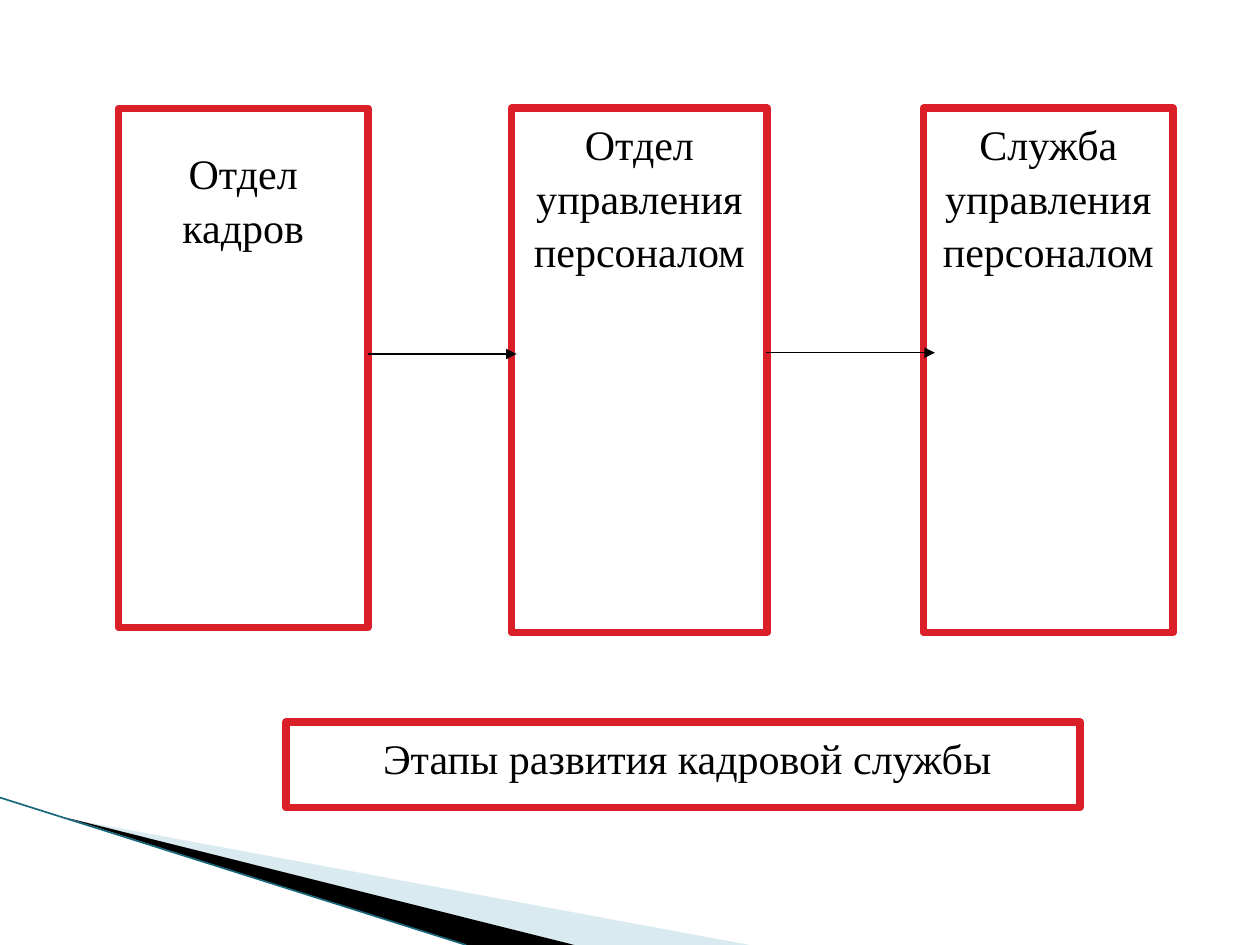
from lxml import etree
from pptx import Presentation
from pptx import util as u
from pptx.dml import color
from pptx.enum import shapes, text
from pptx.oxml import ns

COLORS = {"frame": "DA1F28", "paper": "FFFFFF", "ink": "000000",
          "pale": "A0CBDC", "teal": "17687A"}
COLUMNS, ROWS = 100, 75


class StageSlide:
    """Holds the style and the current slide, measured on a grid of columns and rows."""

    frame = {"width": u.Pt(4.33)}
    font = {"name": "Times New Roman", "size": u.Pt(24)}

    def __init__(self, deck):
        self.column = deck.slide_width / COLUMNS
        self.row = deck.slide_height / ROWS
        self.page = deck.slides.add_slide(deck.slide_layouts[6])

    def point(self, column, row):
        return round(column * self.column), round(row * self.row)

    def apply(self, target, values):
        for name, value in values.items():
            setattr(target, name, value)

    def paint(self, fill, name):
        fill.solid()
        fill.fore_color.rgb = color.RGBColor.from_string(COLORS[name])

    def wedge(self, points, name, opacity=100):
        start, *rest = [self.point(*corner) for corner in points]
        builder = self.page.shapes.build_freeform(*start)
        builder.add_line_segments(rest, close=True)
        shape = builder.convert_to_shape()
        shape.shadow.inherit = False
        shape.line.fill.background()
        self.paint(shape.fill, name)
        if opacity < 100:
            tint = shape.fill._xPr.find(".//" + ns.qn("a:srgbClr"))
            etree.SubElement(tint, ns.qn("a:alpha"), val=str(opacity * 1000))

    def line(self, start, end, name="ink", width=0.75, arrow=False):
        connector = self.page.shapes.add_connector(
            shapes.MSO_CONNECTOR.STRAIGHT, *self.point(*start), *self.point(*end))
        self.paint(connector.line.fill, name)
        connector.line.width = u.Pt(width)
        if arrow:
            etree.SubElement(connector.line._get_or_add_ln(), ns.qn("a:tailEnd"), type="triangle")
        etree.SubElement(connector._element.spPr, ns.qn("a:effectLst"))

    def box(self, place, size, words, align=text.PP_ALIGN.CENTER, **margins):
        box = self.page.shapes.add_shape(
            shapes.MSO_SHAPE.RECTANGLE, *self.point(*place), *self.point(*size))
        box.shadow.inherit = False
        self.paint(box.fill, "paper")
        self.paint(box.line.fill, "frame")
        self.apply(box.line, self.frame)
        etree.SubElement(box.line._get_or_add_ln(), ns.qn("a:round"))
        self.apply(box.text_frame, {
            "word_wrap": True, "vertical_anchor": text.MSO_ANCHOR.TOP,
            "margin_top": u.Inches(0.06), **margins})
        para = box.text_frame.paragraphs[0]
        self.apply(para, {"alignment": align, "line_spacing": 1.06})
        span = para.add_run()
        span.text = words
        self.apply(span.font, self.font)
        self.paint(span.font.fill, "ink")


def main():
    deck = Presentation()
    deck.slide_width, deck.slide_height = u.Inches(10), u.Inches(7.5)
    slide = StageSlide(deck)

    slide.wedge([(5.5, 65), (59.5, 75), (45.6, 75)], "pale", opacity=40)
    slide.wedge([(5.3, 64.9), (45.6, 75), (37, 75)], "ink")
    slide.line((0, 63.3), (37, 75), "teal", 0.95)

    slide.box((9.4, 8.6), (19.8, 41.2), "Отдел кадров", margin_top=u.Inches(0.29))
    slide.box((40.6, 8.6), (20.3, 41.6), "Отдел управления персоналом")
    slide.box((73.3, 8.6), (19.8, 41.6), "Служба управления персоналом")
    slide.line((29.2, 28.1), (41, 28.1), arrow=True)
    slide.line((60.8, 28), (74.2, 28), arrow=True)

    slide.box((22.7, 57.3), (63, 6.8), "Этапы развития кадровой службы",
              align=text.PP_ALIGN.LEFT, margin_left=u.Inches(0.77))
    deck.save("out.pptx")


if __name__ == "__main__":
    main()
